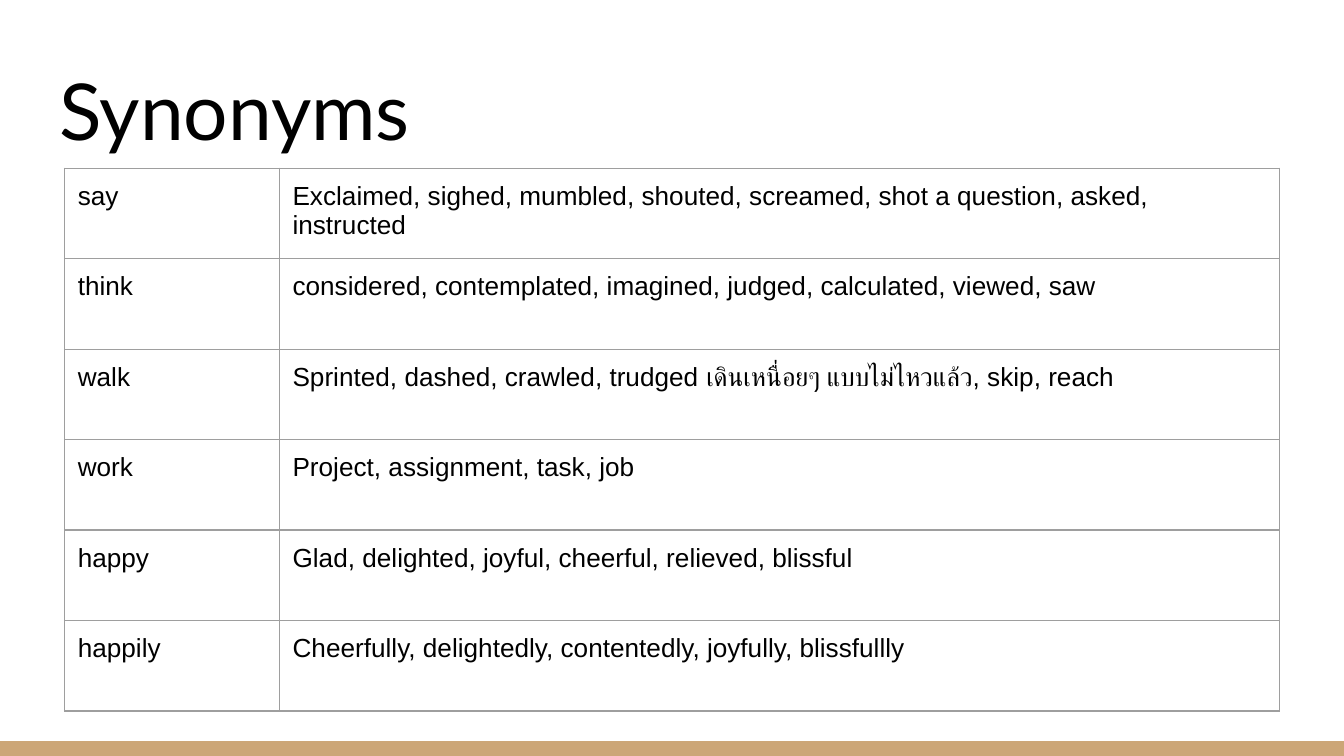
from lxml import etree
from pptx import Presentation
from pptx.dml.color import RGBColor
from pptx.enum.shapes import MSO_SHAPE
from pptx.enum.text import MSO_ANCHOR, PP_ALIGN
from pptx.oxml.ns import qn
from pptx.util import Cm, Pt

RECTANGLE = MSO_SHAPE.RECTANGLE
TOP, BOTTOM = MSO_ANCHOR.TOP, MSO_ANCHOR.BOTTOM
LEFT = PP_ALIGN.LEFT

COLORS = {"text": "000000", "grid": "9E9E9E", "band": "CCA677", "page": "FFFFFF"}
INSET = Cm(0.25)
BORDER = Pt(0.75)
BAND_HEIGHT = 0.28
KEY_WIDTH = 4.06

SYNONYMS = [
    ("say", "Exclaimed, sighed, mumbled, shouted, screamed, shot a question, asked, instructed"),
    ("think", "considered, contemplated, imagined, judged, calculated, viewed, saw"),
    ("walk", "Sprinted, dashed, crawled, trudged เดินเหนื่อยๆ แบบไม่ไหวแล้ว, skip, reach"),
    ("work", "Project, assignment, task, job"),
    ("happy", "Glad, delighted, joyful, cheerful, relieved, blissful"),
    ("happily", "Cheerfully, delightedly, contentedly, joyfully, blissfullly"),
]


def color(name):
    return RGBColor.from_string(COLORS[name])


def write(holder, text, font, size):
    """Write one left-aligned run into a text frame or a cell."""
    holder.margin_left = holder.margin_right = INSET
    holder.margin_top = holder.margin_bottom = INSET
    holder.vertical_anchor = TOP
    frame = getattr(holder, "text_frame", holder)
    para = frame.paragraphs[0]
    para.alignment = LEFT
    span = para.add_run()
    span.text = text
    span.font.name = font
    span.font.size = Pt(size)
    span.font.color.rgb = color("text")


def add_borders(cell):
    properties = cell._tc.get_or_add_tcPr()
    for side in ("lnL", "lnR", "lnT", "lnB"):
        line = etree.SubElement(properties, qn(f"a:{side}"), w=str(BORDER))
        fill = etree.SubElement(line, qn("a:solidFill"))
        etree.SubElement(fill, qn("a:srgbClr"), val=COLORS["grid"])


def add_band(page, left, top, width, height):
    band = page.shapes.add_shape(RECTANGLE, Cm(left), Cm(top), Cm(width), Cm(height))
    band.shadow.inherit = False
    band.fill.solid()
    band.fill.fore_color.rgb = color("band")
    band.line.fill.background()


def add_title(page, left, top, width, height):
    box = page.shapes.add_textbox(Cm(left), Cm(top), Cm(width), Cm(height))
    frame = box.text_frame
    frame.word_wrap = True
    write(frame, "Synonyms", "Lato", 42)
    frame.vertical_anchor = BOTTOM


def add_synonym_table(page, left, top, width, height):
    frame = page.shapes.add_table(
        len(SYNONYMS), 2, Cm(left), Cm(top), Cm(width), Cm(height))
    table = frame.table
    table.first_row = table.horz_banding = False
    table.columns[0].width = Cm(KEY_WIDTH)
    table.columns[1].width = Cm(width - KEY_WIDTH)
    for row, words in enumerate(SYNONYMS):
        for column, text in enumerate(words):
            cell = table.cell(row, column)
            write(cell, text, "Arial", 14)
            add_borders(cell)
            cell.fill.background()


def add_synonyms_slide(deck, width, height):
    page = deck.slides.add_slide(deck.slide_layouts[6])
    page.background.fill.solid()
    page.background.fill.fore_color.rgb = color("page")
    add_band(page, 0, height - BAND_HEIGHT, width, BAND_HEIGHT)
    add_title(page, 0.87, 0.9, 23.67, 2.3)
    add_synonym_table(page, 1.22, 3.18, 22.96, 10.26)


def main():
    width, height = 25.4, 14.29
    deck = Presentation()
    deck.slide_width, deck.slide_height = Cm(width), Cm(height)
    add_synonyms_slide(deck, width, height)
    deck.save("out.pptx")


if __name__ == "__main__":
    main()
